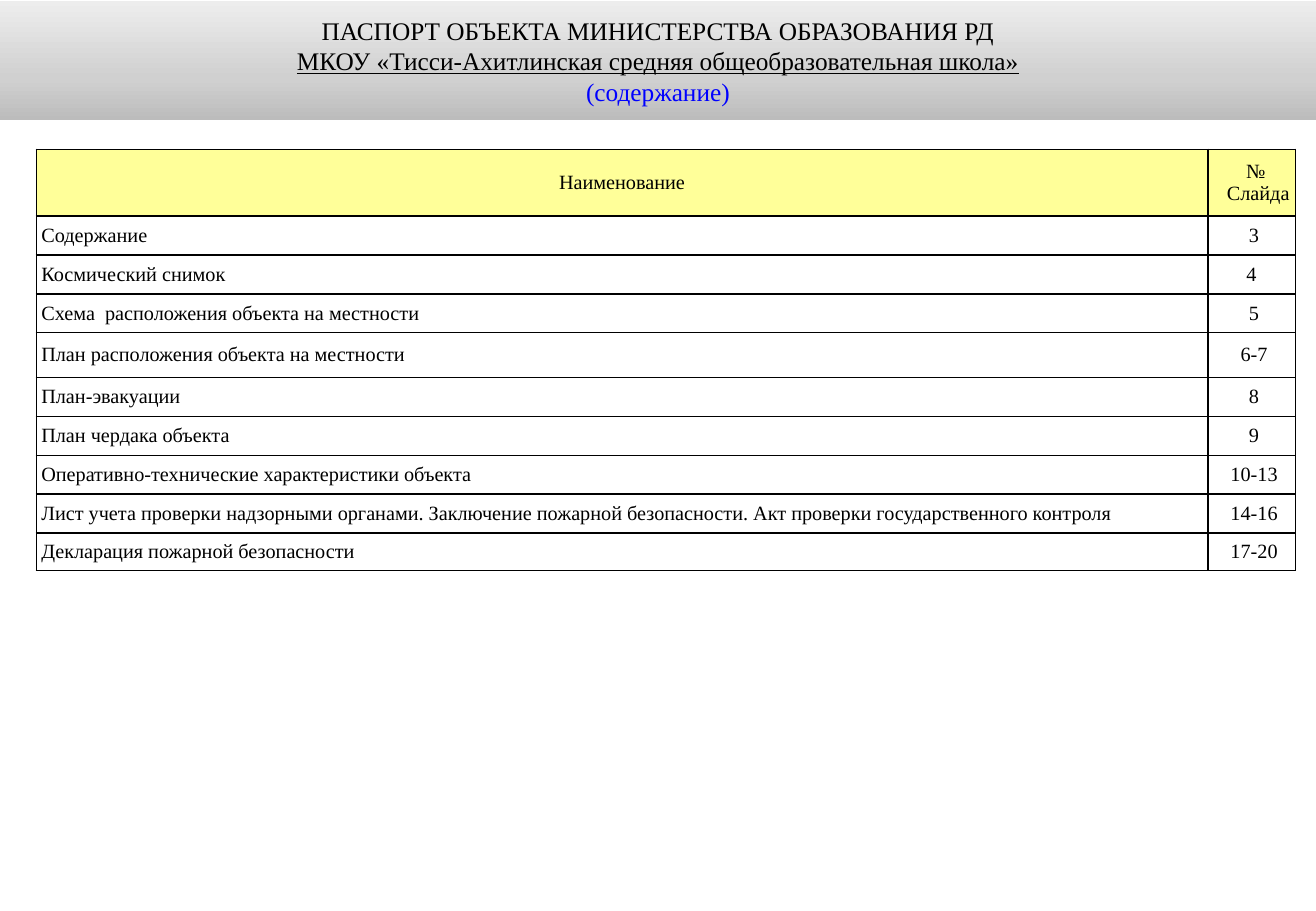
"""Build the contents slide of a school safety passport."""
from lxml import etree
from pptx import Presentation, util as u
from pptx.dml.color import RGBColor
from pptx.enum import shapes, text
from pptx.oxml.ns import qn

THEME = {
    "font": "Times New Roman",
    "title_size": 15,
    "table_size": 12,
    "ink": "000000",
    "accent": "0000FF",
    "heading_fill": "FFFF99",
    "banner": [(0, "BCBCBC"), (35, "D0D0D0"), (100, "EDEDED")],
    "border": 1,
}

TITLE = [
    ("ПАСПОРТ ОБЪЕКТА МИНИСТЕРСТВА ОБРАЗОВАНИЯ РД", "ink", False),
    ("МКОУ «Тисси-Ахитлинская средняя общеобразовательная школа»", "ink", True),
    ("(содержание)", "accent", False),
]
HEADINGS = ("Наименование", "№ \nСлайда")
CONTENTS = [
    ("Содержание", " 3"),
    ("Космический снимок", "4"),
    ("Схема  расположения объекта на местности", " 5"),
    ("План расположения объекта на местности", " 6-7"),
    ("План-эвакуации", " 8"),
    ("План чердака объекта", " 9"),
    ("Оперативно-технические характеристики объекта", " 10-13"),
    ("Лист учета проверки надзорными органами. Заключение пожарной безопасности. "
     "Акт проверки государственного контроля", " 14-16"),
    ("Декларация пожарной безопасности", " 17-20"),
]
COLUMN_WIDTHS = (9.64, 0.72)
HEADING_HEIGHT, ROW_HEIGHT = 0.55, 0.32
SPECIAL_HEIGHTS = {4: 0.37, 9: 0.31}
HEADING_INDENTS, BODY_INDENTS = (0, 0.11), (0.04, 0)


def style_font(font, size, color, underline=False):
    font.name = THEME["font"]
    font.size = u.Pt(size)
    font.color.rgb = RGBColor.from_string(color)
    font.underline = underline


def add_solid(parent, color):
    solid = etree.SubElement(parent, qn("a:solidFill"))
    etree.SubElement(solid, qn("a:srgbClr"), val=color)


def add_banner(slide, width):
    banner = slide.shapes.add_shape(
        shapes.MSO_SHAPE.RECTANGLE, 0, u.Inches(0.01), width, u.Inches(0.98))
    banner.shadow.inherit = False
    banner.line.fill.background()
    banner.fill.gradient()
    banner.fill.gradient_angle = 90
    stops = banner._element.spPr.find(qn("a:gradFill")).find(qn("a:gsLst"))
    for stop in list(stops):
        stops.remove(stop)
    for percent, color in THEME["banner"]:
        stop = etree.SubElement(stops, qn("a:gs"), pos=str(percent * 1000))
        etree.SubElement(stop, qn("a:srgbClr"), val=color)

    frame = banner.text_frame
    frame.word_wrap = True
    frame.vertical_anchor = text.MSO_ANCHOR.MIDDLE
    frame.margin_left = frame.margin_right = u.Inches(0.09)
    frame.text = "\n".join(line for line, _, _ in TITLE)
    for paragraph, (_, color, underline) in zip(frame.paragraphs, TITLE):
        paragraph.alignment = text.PP_ALIGN.CENTER
        style_font(paragraph.runs[0].font, THEME["title_size"], THEME[color], underline)


def fill_cell(cell, words, centred, indent, fill):
    cell.margin_left = cell.margin_right = cell.margin_top = cell.margin_bottom = 0
    cell.vertical_anchor = text.MSO_ANCHOR.MIDDLE
    for side in ("a:lnL", "a:lnR", "a:lnT", "a:lnB"):
        border = etree.SubElement(
            cell._tc.get_or_add_tcPr(), qn(side), w=str(u.Pt(THEME["border"])))
        add_solid(border, THEME["ink"])
    if fill:
        cell.fill.solid()
        cell.fill.fore_color.rgb = RGBColor.from_string(fill)
    else:
        cell.fill.background()
    cell.text_frame.text = words
    for paragraph in cell.text_frame.paragraphs:
        paragraph.alignment = text.PP_ALIGN.CENTER if centred else text.PP_ALIGN.LEFT
        properties = paragraph._p.get_or_add_pPr()
        properties.set("marL", str(u.Inches(indent)))
        properties.set("indent", "0")
        style_font(paragraph.runs[0].font, THEME["table_size"], THEME["ink"])


def add_contents(slide):
    rows = [HEADINGS, *CONTENTS]
    heights = [HEADING_HEIGHT] + [
        SPECIAL_HEIGHTS.get(i, ROW_HEIGHT) for i in range(1, len(rows))]
    contents = slide.shapes.add_table(
        len(rows), len(COLUMN_WIDTHS), u.Inches(0.3), u.Inches(1.23),
        u.Inches(sum(COLUMN_WIDTHS)), u.Inches(sum(heights))).table
    contents.first_row = contents.horz_banding = False
    for column, width in zip(contents.columns, COLUMN_WIDTHS):
        column.width = u.Inches(width)
    for i, (row, height) in enumerate(zip(rows, heights)):
        contents.rows[i].height = u.Inches(height)
        heading = i == 0
        indents = HEADING_INDENTS if heading else BODY_INDENTS
        for j, words in enumerate(row):
            fill_cell(contents.cell(i, j), words, heading or j == 1, indents[j],
                      THEME["heading_fill"] if heading else None)


def main():
    deck = Presentation()
    deck.slide_width, deck.slide_height = u.Inches(10.83), u.Inches(7.5)
    slide = deck.slides.add_slide(deck.slide_layouts[6])
    add_banner(slide, deck.slide_width)
    add_contents(slide)
    deck.save("out.pptx")


if __name__ == "__main__":
    main()
